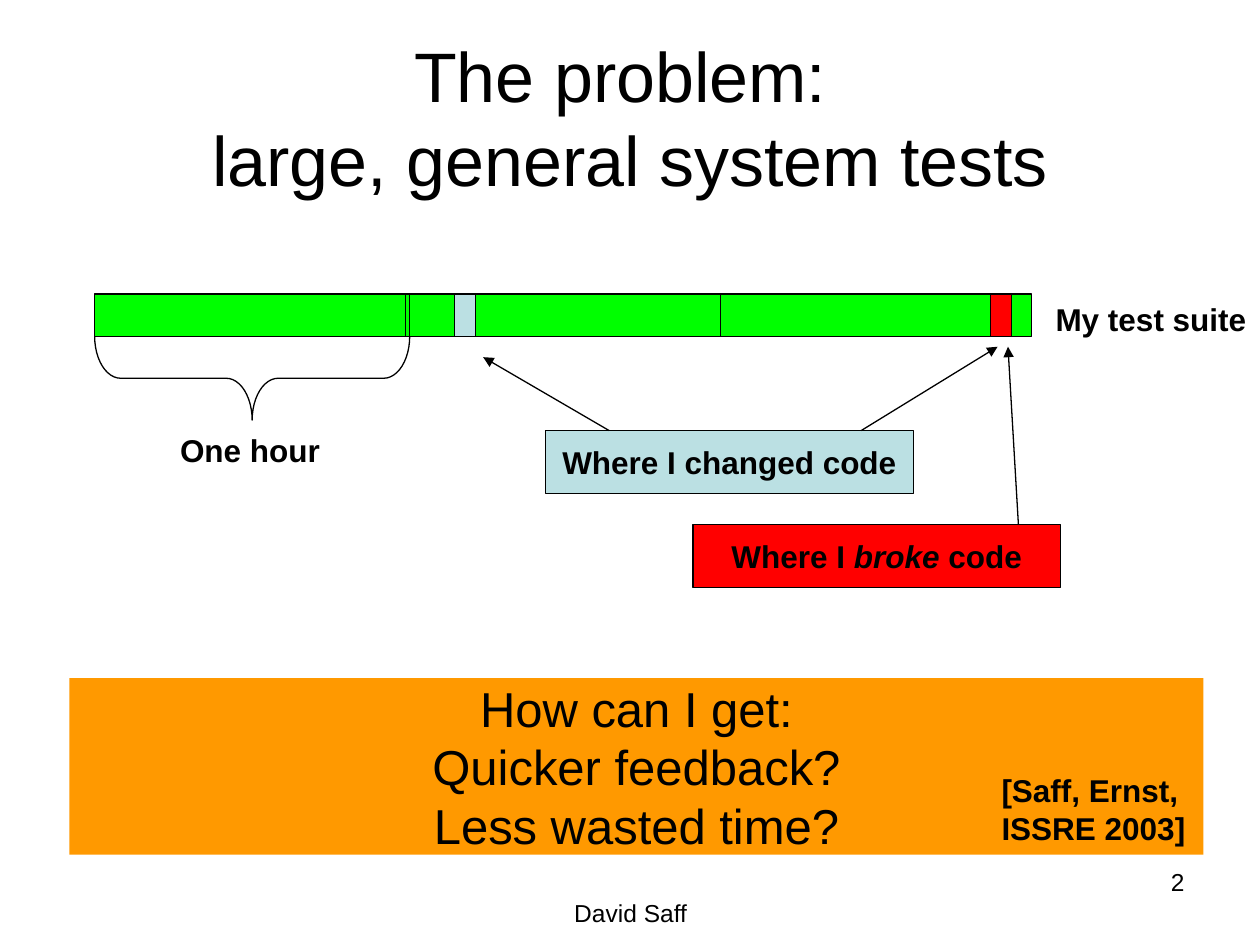
from dataclasses import dataclass

from lxml import etree
from pptx import Presentation
from pptx import util as u
from pptx.dml.color import RGBColor
from pptx.enum import shapes, text
from pptx.oxml.ns import qn


@dataclass(frozen=True)
class Theme:
    font: str = "Arial"
    ink: str = "000000"
    green: str = "00FF00"
    blue: str = "BBE0E3"
    red: str = "FF0000"
    orange: str = "FF9900"
    title: int = 40
    ask: int = 28
    label: int = 18
    foot: int = 14
    line: float = 0.75


@dataclass(frozen=True)
class Box:
    x: float
    y: float
    w: float
    h: float

    def cm(self) -> list:
        return [u.Cm(v) for v in (self.x, self.y, self.w, self.h)]


@dataclass(frozen=True)
class Note:
    box: Box
    words: str
    size: int
    bold: bool = False
    align: text.PP_ALIGN = text.PP_ALIGN.LEFT
    anchor: text.MSO_ANCHOR = text.MSO_ANCHOR.TOP
    wrap: bool = True


@dataclass(frozen=True)
class Arrow:
    x1: float
    y1: float
    x2: float
    y2: float


T = Theme()
MID = text.PP_ALIGN.CENTER
CORE = text.MSO_ANCHOR.MIDDLE

LEFT, TOP, HIGH = 1.91, 5.93, 0.85
SPAN, MARK, SHIFT = 6.27, 0.42, 0.08
BLUE_X, RED_X = 9.09, 19.89

CHANGED = Box(11, 8.68, 7.41, 1.27)
BROKE = Box(13.97, 10.58, 7.41, 1.27)
BANNER = Box(1.4, 13.67, 22.86, 3.56)

CALLS = [
    (Note(CHANGED, "Where I changed code", T.label, True, MID, CORE, False), T.blue),
    (Note(BROKE, "Where I *broke* code", T.label, True, MID, CORE, False), T.red),
]
ARROWS = [
    Arrow(12.28, CHANGED.y, 9.74, 7.2),
    Arrow(17.36, CHANGED.y, 20.11, 6.99),
    Arrow(20.53, BROKE.y, 20.32, 6.99),
]
ASK = Note(BANNER, "How can I get:\vQuicker feedback?\vLess wasted time?",
           T.ask, False, MID, CORE)
NOTES = [
    Note(Box(8.69, 17.98, 8.05, 0.69), "David Saff", T.foot, align=MID),
    Note(Box(18.21, 17.35, 5.92, 1.32), "2", T.foot, align=text.PP_ALIGN.RIGHT),
    Note(Box(1.27, 0.76, 22.86, 3.18),
         "The problem: \vlarge, general system tests", T.title, False, MID, CORE),
    Note(Box(21.03, 5.92, 4.37, 1.02), "My test suite", T.label, True, wrap=False),
    Note(Box(3.38, 8.56, 3.33, 1.02), "One hour", T.label, True, wrap=False),
    Note(Box(19.94, 15.42, 4.24, 1.78), "[Saff, Ernst,\nISSRE 2003]",
         T.label, True, wrap=False),
]


def rgb(code: str) -> RGBColor:
    return RGBColor.from_string(code)


def write(shape, note: Note) -> None:
    frame = shape.text_frame
    frame.word_wrap = note.wrap
    frame.vertical_anchor = note.anchor
    parts = note.words.split("*")
    frame.text = parts[0]
    for part in parts[1:]:
        frame.paragraphs[-1].add_run().text = part
    for para in frame.paragraphs:
        para.alignment = note.align
        for i, run in enumerate(para.runs):
            font = run.font
            font.name, font.size, font.bold = T.font, u.Pt(note.size), note.bold
            font.color.rgb = rgb(T.ink)
            if len(parts) > 1:
                font.italic = i % 2 == 1


def label(slide, note: Note) -> None:
    shape = slide.shapes.add_textbox(*note.box.cm())
    write(shape, note)
    if not note.wrap:
        shape.text_frame.auto_size = text.MSO_AUTO_SIZE.SHAPE_TO_FIT_TEXT


def edge(line) -> None:
    line.color.rgb = rgb(T.ink)
    line.width = u.Pt(T.line)


def block(slide, box: Box, fill: str, rim: bool = True):
    shape = slide.shapes.add_shape(shapes.MSO_SHAPE.RECTANGLE, *box.cm())
    shape.shadow.inherit = False
    shape.fill.solid()
    shape.fill.fore_color.rgb = rgb(fill)
    if rim:
        edge(shape.line)
    else:
        shape.line.fill.background()
    return shape


def brace(slide, box: Box) -> None:
    shape = slide.shapes.add_shape(shapes.MSO_SHAPE.LEFT_BRACE, *box.cm())
    shape.rotation = 270
    shape.adjustments[0] = 0.31
    shape.shadow.inherit = False
    shape.fill.background()
    edge(shape.line)


def arrow(slide, way: Arrow) -> None:
    ends = [u.Cm(v) for v in (way.x1, way.y1, way.x2, way.y2)]
    link = slide.shapes.add_connector(shapes.MSO_CONNECTOR.STRAIGHT, *ends)
    edge(link.line)
    etree.SubElement(link.line._get_or_add_ln(), qn("a:tailEnd"), type="triangle")
    etree.SubElement(link._element.spPr, qn("a:effectLst"))


def suite(slide, first: int, shift: float) -> None:
    for i in range(first, 3):
        block(slide, Box(LEFT + i * SPAN + shift, TOP, SPAN, HIGH), T.green)
    for x, fill in ((BLUE_X, T.blue), (RED_X, T.red)):
        block(slide, Box(x + shift, TOP, MARK, HIGH), fill)


def main() -> None:
    deck = Presentation()
    deck.slide_width, deck.slide_height = u.Cm(25.4), u.Cm(19.05)
    slide = deck.slides.add_slide(deck.slide_layouts[6])
    suite(slide, 0, 0)
    brace(slide, Box(4.24, 4.45, 1.69, 6.35))
    for note, fill in CALLS:
        write(block(slide, note.box, fill), note)
    for way in ARROWS:
        arrow(slide, way)
    suite(slide, 1, SHIFT)
    write(block(slide, BANNER, T.orange, False), ASK)
    for note in NOTES:
        label(slide, note)
    deck.save("out.pptx")


if __name__ == "__main__":
    main()
